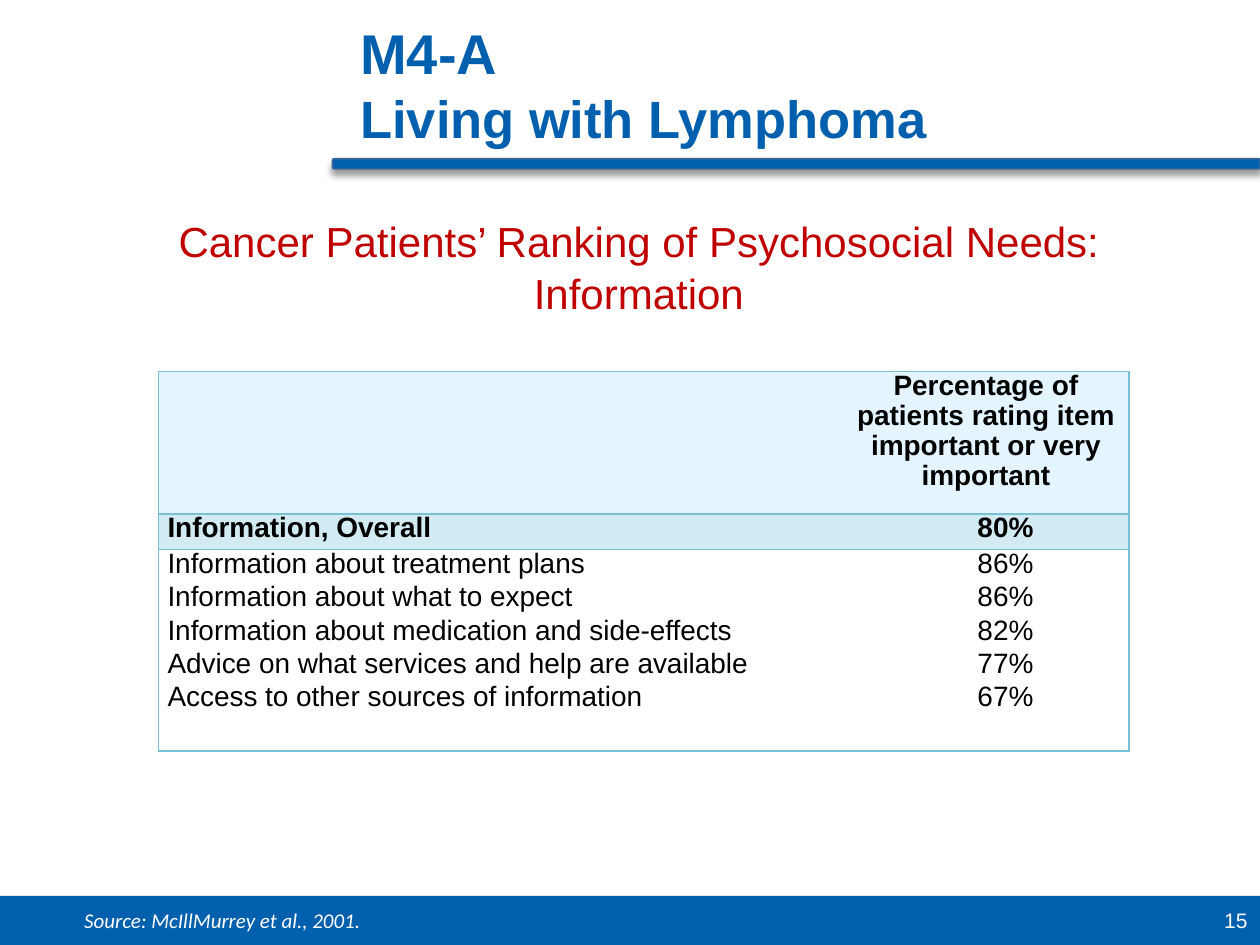
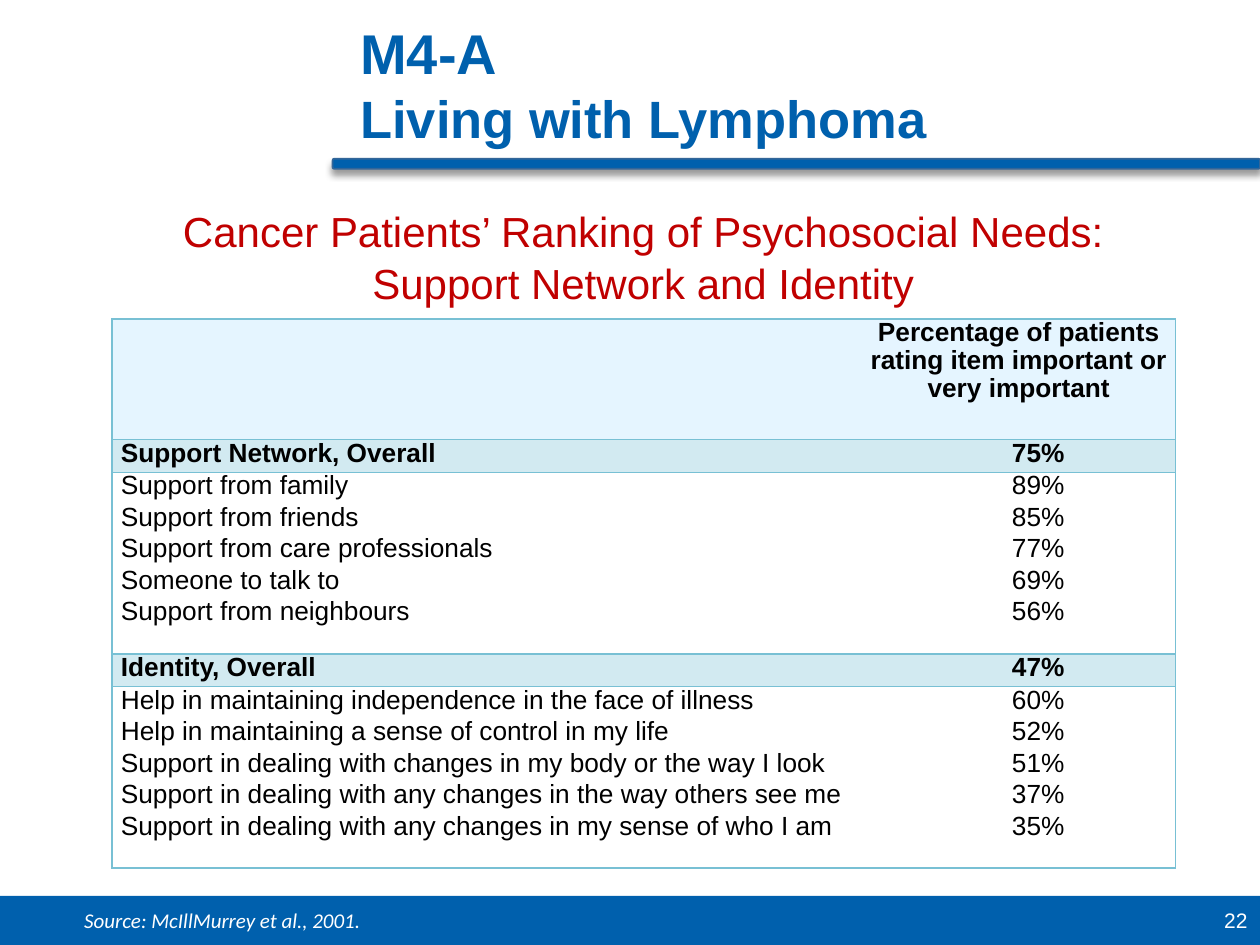
from lxml import etree
from pptx import Presentation
from pptx import util as u
from pptx.dml.color import RGBColor
from pptx.enum import shapes, text
from pptx.oxml import parse_xml
from pptx.oxml.ns import nsdecls, qn

BLUE, RED, WHITE, BLACK = "0060AD", "C00000", "FFFFFF", "000000"
BAR_EDGE, BORDER, HEADER, OVERALL = "336699", "78C0D4", "E5F5FF", "D2EAF1"
WIDTH, HEIGHT = 10, 7.5
FOOTER_TOP, FOOTER_HEIGHT = 7.11, 0.39
BAR_LEFT = 2.64
RATING = "Percentage of patients rating item important or very important"
SOURCE = "Source: McIllMurrey et al., 2001."


def color(value):
    return RGBColor.from_string(value)


def write(frame, lines, size, fill, align=text.PP_ALIGN.LEFT, bold=False,
          name="Arial", spacing=1.0, before=0, indent=0):
    """Fill a text frame with one formatted paragraph per line."""
    frame.word_wrap = True
    frame.text = "\n".join(lines)
    for index, paragraph in enumerate(frame.paragraphs):
        if indent:
            paragraph._p.get_or_add_pPr().set("marL", str(u.Inches(indent)))
        paragraph.alignment = align
        paragraph.line_spacing = spacing
        paragraph.space_before = u.Pt(before if index else 0)
        for run in paragraph.runs:
            run.font.size, run.font.name, run.font.bold = u.Pt(size), name, bold
            run.font.color.rgb = color(fill)


# Content: each section is an overall row followed by its items
pages = [
    dict(number="15", subtitle="Cancer Patients’ Ranking of Psychosocial Needs: Information",
         subtitle_box=(0.57, 1.69, 9, 0.84), table_at=(1.26, 2.95), columns=(5.43, 2.27),
         size=16, header_height=1.13, overall_height=0.28, items_height=1.6,
         sections=[
             ("Information, Overall", "80%", [
                 ("Information about treatment plans", "86%"),
                 ("Information about what to expect", "86%"),
                 ("Information about medication and side-effects", "82%"),
                 ("Advice on what services and help are available", "77%"),
                 ("Access to other sources of information", "67%")])]),
    dict(number="22",
         subtitle="Cancer Patients’ Ranking of Psychosocial Needs: Support Network and Identity",
         subtitle_box=(0.84, 1.61, 8.53, 0.84), table_at=(0.89, 2.53), columns=(5.95, 2.49),
         size=15, header_height=0.96, overall_height=0.26, items_height=1.44,
         sections=[
             ("Support Network, Overall", "75%", [
                 ("Support from family", "89%"),
                 ("Support from friends", "85%"),
                 ("Support from care professionals", "77%"),
                 ("Someone to talk to", "69%"),
                 ("Support from neighbours", "56%")]),
             ("Identity, Overall", "47%", [
                 ("Help in maintaining independence in the face of illness", "60%"),
                 ("Help in maintaining a sense of control in my life", "52%"),
                 ("Support in dealing with changes in my body or the way I look", "51%"),
                 ("Support in dealing with any changes in the way others see me", "37%"),
                 ("Support in dealing with any changes in my sense of who I am", "35%")])]),
]

presentation = Presentation()
presentation.slide_width, presentation.slide_height = u.Inches(WIDTH), u.Inches(HEIGHT)

for page in pages:
    slide = presentation.slides.add_slide(presentation.slide_layouts[5])

    # Footer band and title bar
    for kind, box in (
            (shapes.MSO_SHAPE.RECTANGLE, (0, FOOTER_TOP, WIDTH, FOOTER_HEIGHT)),
            (shapes.MSO_SHAPE.ROUNDED_RECTANGLE, (BAR_LEFT, 1.26, WIDTH - BAR_LEFT, 0.08))):
        band = slide.shapes.add_shape(kind, *map(u.Inches, box))
        band.shadow.inherit = False
        band.fill.solid()
        band.fill.fore_color.rgb = color(BLUE)
        band.line.fill.background()
    title_bar = band
    title_bar.line.color.rgb = color(BAR_EDGE)
    title_bar.line.width = u.Pt(1)
    effects = title_bar._element.spPr.find(qn("a:effectLst"))
    effects.append(parse_xml(
        f'<a:outerShdw {nsdecls("a")} blurRad="{u.Pt(4)}" dist="{u.Pt(3)}" dir="5400000" '
        f'rotWithShape="0"><a:srgbClr val="{BLACK}"><a:alpha val="40000"/></a:srgbClr>'
        '</a:outerShdw>'))

    # Title
    title = slide.shapes.title
    title.left, title.top, title.width, title.height = map(u.Inches, (2.76, 0.17, 7.24, 0.99))
    write(title.text_frame, ["M4-A\vLiving with Lymphoma"], 32, BLUE, bold=True)
    title.text_frame.paragraphs[0].runs[1].font.size = u.Pt(30)
    title.text_frame.vertical_anchor = text.MSO_ANCHOR.MIDDLE
    title.text_frame.auto_size = text.MSO_AUTO_SIZE.NONE

    # Subtitle, source and page number
    for box, line, style in (
            (page["subtitle_box"], page["subtitle"],
             dict(size=24, fill=RED, align=text.PP_ALIGN.CENTER, spacing=1.04)),
            ((0.57, 7.15, 7.63, 0.3), SOURCE, dict(size=12, fill=WHITE, name="Calibri")),
            ((7.67, FOOTER_TOP, 2.33, FOOTER_HEIGHT), page["number"],
             dict(size=12, fill=WHITE, align=text.PP_ALIGN.RIGHT))):
        label = slide.shapes.add_textbox(*map(u.Inches, box))
        write(label.text_frame, [line], **style)
        label.text_frame.vertical_anchor = text.MSO_ANCHOR.MIDDLE
        label.text_frame.paragraphs[0].runs[0].font.italic = line == SOURCE

    # Table rows: height, fill, bold, item lines, rating lines
    rows = [(page["header_height"], HEADER, True, [], [RATING])]
    for heading, overall, items in page["sections"]:
        names, ratings = zip(*items)
        rows += [(page["overall_height"], OVERALL, True, [heading], [overall]),
                 (page["items_height"], None, False, names, ratings)]
    size = (sum(page["columns"]), sum(row[0] for row in rows))
    table = slide.shapes.add_table(len(rows), 2, *map(u.Inches, page["table_at"] + size)).table
    table.first_row = table.horz_banding = False
    for column, width in zip(table.columns, page["columns"]):
        column.width = u.Inches(width)

    for row_index, (height, fill, bold, *cell_lines) in enumerate(rows):
        table.rows[row_index].height = u.Inches(height)
        for column_index, lines in enumerate(cell_lines):
            cell = table.cell(row_index, column_index)
            cell.margin_left = cell.margin_right = u.Inches(0.07)
            cell.margin_top = cell.margin_bottom = 0
            align = text.PP_ALIGN.CENTER if column_index else text.PP_ALIGN.JUSTIFY
            write(cell.text_frame, lines, page["size"], BLACK, align, bold, spacing=0.96,
                  before=2, indent=0.31 if column_index and row_index else 0)
            if fill:
                cell.fill.solid()
                cell.fill.fore_color.rgb = color(fill)
            else:
                cell.fill.background()

            # Lines around each row, none between the columns
            inner_side = "lnL" if column_index else "lnR"
            properties = cell._tc.get_or_add_tcPr()
            for position, side in enumerate(("lnL", "lnR", "lnT", "lnB")):
                edge = etree.Element(qn(f"a:{side}"), w=str(u.Pt(1)))
                if side == inner_side:
                    etree.SubElement(edge, qn("a:noFill"))
                else:
                    paint = etree.SubElement(edge, qn("a:solidFill"))
                    etree.SubElement(paint, qn("a:srgbClr"), val=BORDER)
                properties.insert(position, edge)

presentation.save("out.pptx")
